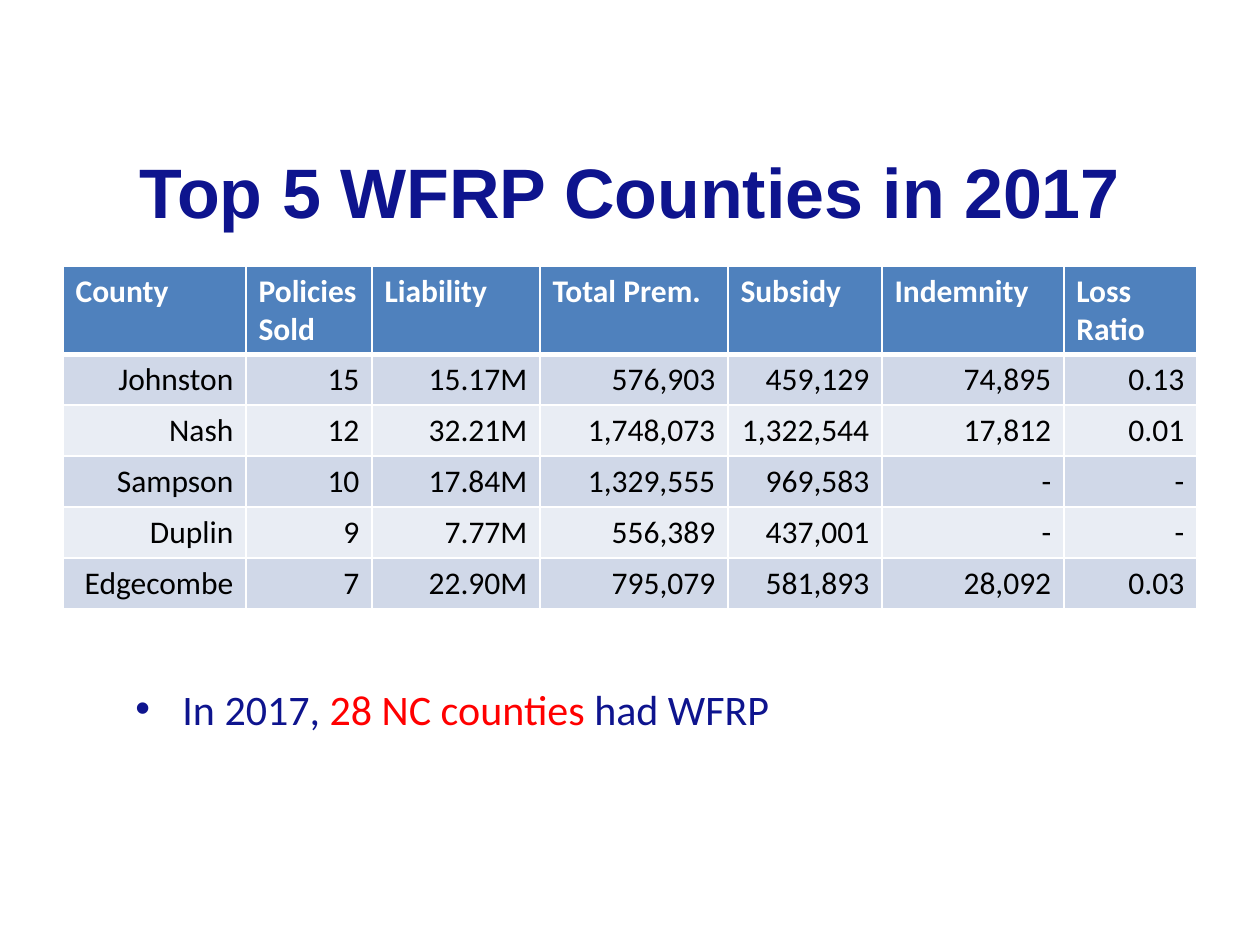
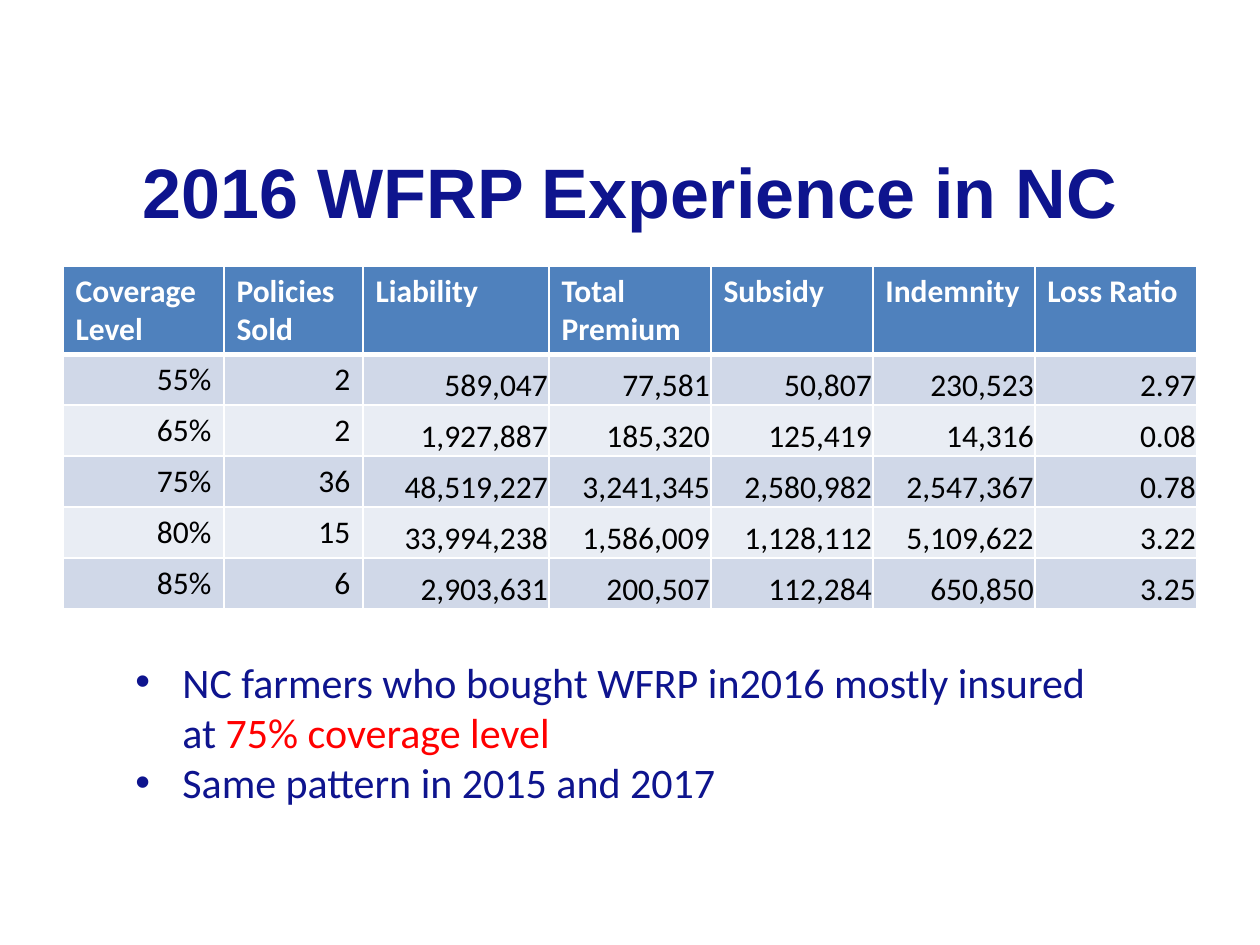
from dataclasses import dataclass

from lxml import etree
from pptx import Presentation
from pptx.dml.color import RGBColor
from pptx.enum.text import MSO_ANCHOR, MSO_AUTO_SIZE, PP_ALIGN
from pptx.oxml.ns import qn
from pptx.util import Emu, Pt

LEFT, CENTER, RIGHT = PP_ALIGN.LEFT, PP_ALIGN.CENTER, PP_ALIGN.RIGHT
TOP, MIDDLE, BOTTOM = MSO_ANCHOR.TOP, MSO_ANCHOR.MIDDLE, MSO_ANCHOR.BOTTOM
FIT_SHAPE = MSO_AUTO_SIZE.SHAPE_TO_FIT_TEXT

PX_PER_INCH = 126
SLIDE_WIDTH, SLIDE_HEIGHT = 1260, 945
MARGIN = 63
CONTENT_WIDTH = SLIDE_WIDTH - 2 * MARGIN
TITLE_TOP, TITLE_HEIGHT = 144, 92
TABLE_TOP, HEADER_HEIGHT, ROW_HEIGHT = 266, 88, 51
NOTES_LEFT, NOTES_WIDTH, BULLET_INDENT = 123, 1014, 47

NAVY, RED, WHITE, BLACK = "0E148E", "FF0000", "FFFFFF", "000000"
HEADER_FILL = "4F81BD"
BAND_FILLS = ("D0D8E8", "E9EDF4")
THIN, THICK = 1, 3

TITLE_FONT = {"name": "Arial", "size": Pt(40), "bold": True}
HEADER_FONT = {"name": "Calibri", "size": Pt(18), "bold": True}
BODY_FONT = {"name": "Calibri", "size": Pt(18), "bold": False}
NOTES_FONT = {"name": "Calibri", "size": Pt(24)}


@dataclass(frozen=True)
class Phrase:
    text: str
    color: str = NAVY


@dataclass(frozen=True)
class CountyTable:
    widths: list[int]
    rows: list[list[str]]
    tight_from: int


@dataclass(frozen=True)
class Notes:
    top: int
    height: int
    bullets: list[list[Phrase]]


@dataclass(frozen=True)
class TableSlide:
    title: str
    table: CountyTable
    notes: Notes


SLIDES = [
    TableSlide(
        "Top 5 WFRP Counties in 2017",
        CountyTable(
            [183, 126, 168, 188, 154, 182, 133],
            [
                ["County", "Policies Sold", "Liability", "Total Prem.", "Subsidy", "Indemnity", "Loss Ratio"],
                ["Johnston", "15", "15.17M", "576,903", "459,129", "74,895", "0.13"],
                ["Nash", "12", "32.21M", "1,748,073", "1,322,544", "17,812", "0.01"],
                ["Sampson", "10", "17.84M", "1,329,555", "969,583", "-", "-"],
                ["Duplin", "9", "7.77M", "556,389", "437,001", "-", "-"],
                ["Edgecombe", "7", "22.90M", "795,079", "581,893", "28,092", "0.03"],
            ],
            tight_from=7,
        ),
        Notes(677, 63, [[Phrase("In 2017, "), Phrase("28 NC counties ", RED), Phrase("had WFRP")]]),
    ),
    TableSlide(
        "2016 WFRP Experience in NC",
        CountyTable(
            [161, 139, 186, 162, 162, 162, 162],
            [
                ["Coverage Level", "Policies Sold", "Liability", "Total Premium", "Subsidy", "Indemnity", "Loss Ratio"],
                ["55%", "2", "589,047", "77,581", "50,807", "230,523", "2.97"],
                ["65%", "2", "1,927,887", "185,320", "125,419", "14,316", "0.08"],
                ["75%", "36", "48,519,227", "3,241,345", "2,580,982", "2,547,367", "0.78"],
                ["80%", "15", "33,994,238", "1,586,009", "1,128,112", "5,109,622", "3.22"],
                ["85%", "6", "2,903,631", "200,507", "112,284", "650,850", "3.25"],
            ],
            tight_from=2,
        ),
        Notes(
            650,
            165,
            [
                [Phrase("NC farmers who bought WFRP in2016 mostly insured at "), Phrase("75% coverage level", RED)],
                [Phrase("Same pattern in 2015 and 2017")],
            ],
        ),
    ),
]


def px(length: int) -> Emu:
    return Emu(round(length * 914400 / PX_PER_INCH))


def rgb(color: str) -> RGBColor:
    return RGBColor.from_string(color)


def set_format(target, values: dict) -> None:
    for name, value in values.items():
        setattr(target, name, value)


def add_phrase(paragraph, phrase: Phrase, font: dict) -> None:
    run = paragraph.add_run()
    run.text = phrase.text
    set_format(run.font, font)
    run.font.color.rgb = rgb(phrase.color)


def add_text_frame(slide, left: int, top: int, width: int, height: int):
    shape = slide.shapes.add_textbox(px(left), px(top), px(width), px(height))
    shape.text_frame.word_wrap = True
    return shape.text_frame


def add_title(slide, title: str) -> None:
    frame = add_text_frame(slide, MARGIN, TITLE_TOP, CONTENT_WIDTH, TITLE_HEIGHT)
    frame.vertical_anchor = MIDDLE
    paragraph = frame.paragraphs[0]
    paragraph.alignment = CENTER
    add_phrase(paragraph, Phrase(title), TITLE_FONT)


def add_borders(cell, top_width: int, bottom_width: int) -> None:
    properties = cell._tc.get_or_add_tcPr()
    widths = {"lnL": THIN, "lnR": THIN, "lnT": top_width, "lnB": bottom_width}
    for side, width in widths.items():
        line = etree.SubElement(properties, qn(f"a:{side}"), w=str(Pt(width)))
        fill = etree.SubElement(line, qn("a:solidFill"))
        etree.SubElement(fill, qn("a:srgbClr"), val=WHITE)


def fill_cell(cell, text: str, row: int, tight: bool) -> None:
    is_header = row == 0
    add_borders(cell, THICK if row == 1 else THIN, THICK if is_header else THIN)
    cell.fill.solid()
    cell.fill.fore_color.rgb = rgb(HEADER_FILL if is_header else BAND_FILLS[(row - 1) % 2])
    if tight and not is_header:
        edge = px(1)
        set_format(cell, {
            "vertical_anchor": BOTTOM,
            "margin_left": edge,
            "margin_top": edge,
            "margin_right": edge,
            "margin_bottom": 0,
        })
    else:
        cell.vertical_anchor = TOP
    paragraph = cell.text_frame.paragraphs[0]
    paragraph.alignment = LEFT if is_header else RIGHT
    color, font = (WHITE, HEADER_FONT) if is_header else (BLACK, BODY_FONT)
    add_phrase(paragraph, Phrase(text, color), font)


def add_county_table(slide, content: CountyTable) -> None:
    heights = [HEADER_HEIGHT] + [ROW_HEIGHT] * (len(content.rows) - 1)
    table = slide.shapes.add_table(
        len(heights), len(content.widths),
        px(MARGIN), px(TABLE_TOP), px(CONTENT_WIDTH), px(sum(heights)),
    ).table
    set_format(table, {"first_row": False, "horz_banding": False})
    for column, width in zip(table.columns, content.widths):
        column.width = px(width)
    for row, height in zip(table.rows, heights):
        row.height = px(height)
    for row_index, texts in enumerate(content.rows):
        for column_index, text in enumerate(texts):
            cell = table.cell(row_index, column_index)
            fill_cell(cell, text, row_index, column_index >= content.tight_from)


def add_bullet(paragraph) -> None:
    properties = paragraph._p.get_or_add_pPr()
    properties.set("marL", str(px(BULLET_INDENT)))
    properties.set("indent", str(-px(BULLET_INDENT)))
    etree.SubElement(properties, qn("a:buFont"), typeface="Arial")
    etree.SubElement(properties, qn("a:buChar"), char="•")


def add_notes(slide, notes: Notes) -> None:
    frame = add_text_frame(slide, NOTES_LEFT, notes.top, NOTES_WIDTH, notes.height)
    frame.auto_size = FIT_SHAPE
    for index, phrases in enumerate(notes.bullets):
        paragraph = frame.add_paragraph() if index else frame.paragraphs[0]
        add_bullet(paragraph)
        for phrase in phrases:
            add_phrase(paragraph, phrase, NOTES_FONT)


def main() -> None:
    presentation = Presentation()
    set_format(presentation, {"slide_width": px(SLIDE_WIDTH), "slide_height": px(SLIDE_HEIGHT)})
    blank_layout = presentation.slide_layouts[6]
    for content in SLIDES:
        slide = presentation.slides.add_slide(blank_layout)
        add_title(slide, content.title)
        add_county_table(slide, content.table)
        add_notes(slide, content.notes)
    presentation.save("out.pptx")


if __name__ == "__main__":
    main()
